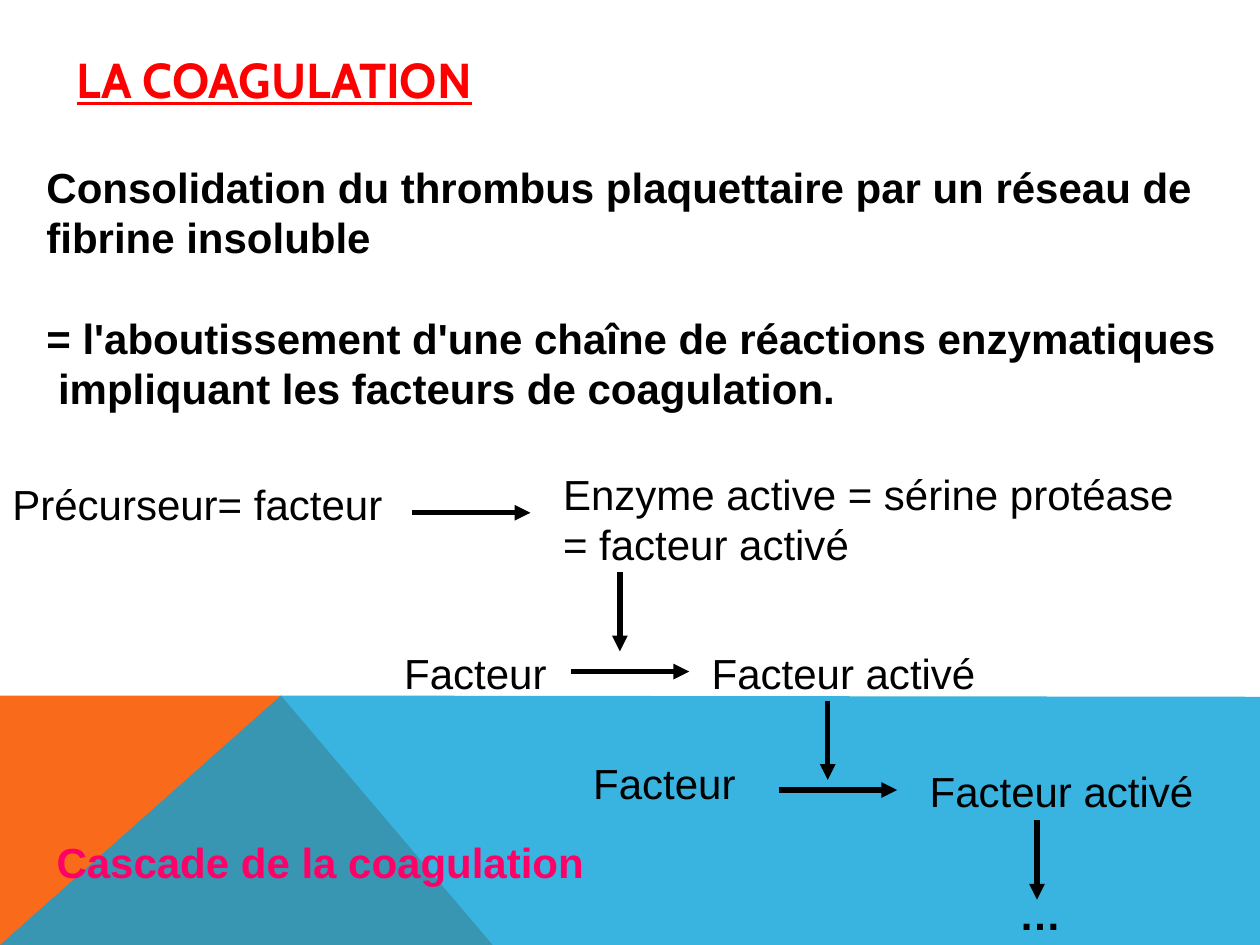
from dataclasses import dataclass
from lxml.etree import SubElement
from pptx import Presentation
from pptx.dml.color import RGBColor
from pptx.enum.shapes import MSO_CONNECTOR
from pptx.enum.text import MSO_ANCHOR, PP_ALIGN
from pptx.oxml.ns import qn
from pptx.util import Inches, Pt


@dataclass(frozen=True)
class Theme:
    ink: str = "000000"
    red: str = "FF0000"
    pink: str = "FF0066"
    orange: str = "F96A1B"
    blue: str = "08A1D9"
    font: str = "Arial"
    head: str = "Cabin"
    title: int = 28
    body: int = 24
    pitch: float = 28.8
    line: int = 3


THEME = Theme()


def set_font(para, name, size, color, bold):
    font = para.font
    font.name = name
    font.size = Pt(size)
    font.bold = bold
    font.color.rgb = RGBColor.from_string(color)


def add_band(slide, layer, points, color, alpha=None):
    start, *rest = [(Inches(x), Inches(y)) for x, y in points]
    pen = slide.shapes.build_freeform(*start)
    pen.add_line_segments(rest)
    band = pen.convert_to_shape()
    band.shadow.inherit = False
    band.fill.solid()
    band.fill.fore_color.rgb = RGBColor.from_string(color)
    band.line.fill.background()
    if alpha:
        tint = band.element.spPr.find(".//" + qn("a:srgbClr"))
        SubElement(tint, qn("a:alpha"), val=str(alpha * 1000))
    band.element.getparent().insert(2 + layer, band.element)


def add_title(slide, text):
    title = slide.shapes.title
    title.left, title.top = Inches(0.51), Inches(0)
    title.width, title.height = Inches(9), Inches(1.25)
    frame = title.text_frame
    frame.text = text
    frame.vertical_anchor = MSO_ANCHOR.MIDDLE
    para = frame.paragraphs[0]
    para.alignment = PP_ALIGN.LEFT
    set_font(para, THEME.head, THEME.title, THEME.red, True)
    para.font.underline = True


def add_text(slide, left, top, width, lines, color=THEME.ink, bold=False, height=0.5):
    box = slide.shapes.add_textbox(Inches(left), Inches(top), Inches(width), Inches(height))
    frame = box.text_frame
    frame.word_wrap = False
    frame.text = "\n".join(lines)
    for para in frame.paragraphs:
        para.alignment = PP_ALIGN.LEFT
        para.line_spacing = Pt(THEME.pitch)
        set_font(para, THEME.font, THEME.body, color, bold)
    return frame


def add_arrow(slide, x, y, dx=0.0, dy=0.0):
    arrow = slide.shapes.add_connector(
        MSO_CONNECTOR.STRAIGHT, Inches(x), Inches(y), Inches(x + dx), Inches(y + dy))
    arrow.line.width = Pt(THEME.line)
    arrow.line.color.rgb = RGBColor.from_string(THEME.ink)
    SubElement(arrow.line._get_or_add_ln(), qn("a:tailEnd"), type="triangle")
    SubElement(arrow.element.spPr, qn("a:effectLst"))


def main():
    deck = Presentation()
    deck.slide_width, deck.slide_height = Inches(10), Inches(7.5)
    slide = deck.slides.add_slide(deck.slide_layouts[5])
    add_title(slide, "LA COAGULATION")
    peak = (2.23, 5.52)
    add_band(slide, 0, [(0, 7.5), (0, 5.52), peak, (3.91, 7.5)], THEME.orange)
    add_band(slide, 1, [(0, 7.5), peak, (10, 5.53), (10, 7.5)], THEME.blue, 80)

    intro = add_text(slide, 0.27, 1.23, 9.48, [
        "Consolidation du thrombus plaquettaire par un réseau de",
        "fibrine insoluble",
        "= l'aboutissement d'une chaîne de réactions enzymatiques",
        " impliquant les facteurs de coagulation.",
    ], bold=True, height=2.1)
    intro.paragraphs[2].space_before = Pt(THEME.pitch)

    add_text(slide, 0, 3.75, 3.14, ["Précurseur= facteur"])
    add_text(slide, 4.37, 3.67, 5.05,
             ["Enzyme active = sérine protéase", "= facteur activé"], height=0.9)
    for left, top in [(3.11, 5.09), (4.61, 5.96)]:
        add_text(slide, left, top, 1.33, ["Facteur"])
    for left, top in [(5.55, 5.09), (7.28, 6.03)]:
        add_text(slide, left, top, 2.3, ["Facteur activé"])

    for x, y in [(3.27, 4.07), (4.53, 5.33), (6.18, 6.27)]:
        add_arrow(slide, x, y, dx=0.94)
    for x, y in [(4.92, 4.54), (6.57, 5.56), (8.23, 6.51)]:
        add_arrow(slide, x, y, dy=0.63)

    add_text(slide, 0.35, 6.59, 4.39, ["Cascade de la coagulation"], THEME.pink, True)
    add_text(slide, 7.99, 7, 0.53, ["…"], bold=True)
    deck.save("out.pptx")


if __name__ == "__main__":
    main()
